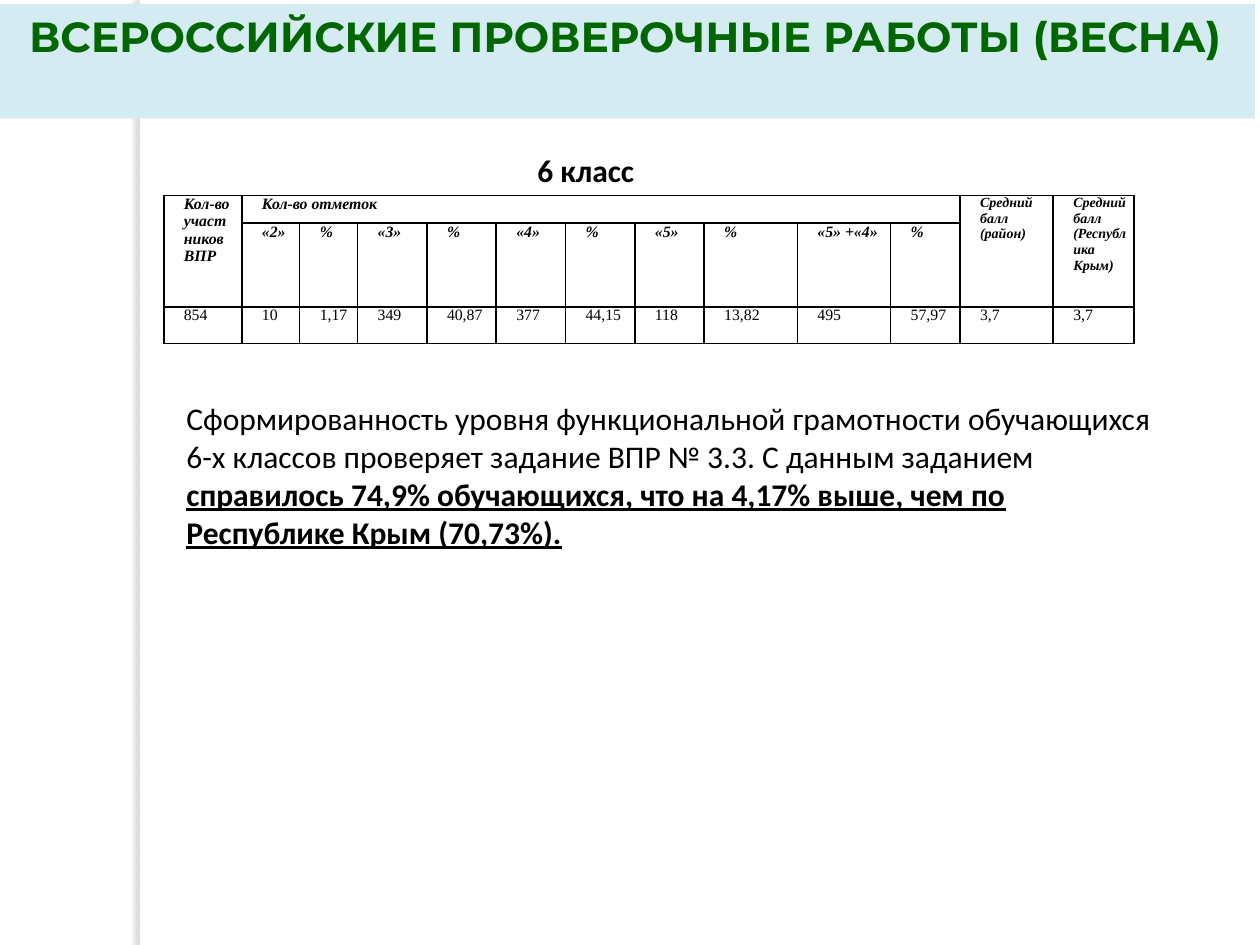
from dataclasses import dataclass

from lxml.etree import SubElement as Sub
from pptx import Presentation
from pptx.dml.color import RGBColor as Rgb
from pptx.enum.shapes import MSO_SHAPE as Shape
from pptx.enum.text import MSO_ANCHOR as Anchor, PP_ALIGN as Align
from pptx.oxml.ns import qn
from pptx.util import Pt


@dataclass(frozen=True)
class Theme:
    """Colours, fonts and type sizes of the slide."""
    white: str = "FFFFFF"
    band: str = "D4EBF1"
    green: str = "006600"
    black: str = "000000"
    shade: str = "736F63"
    head: str = "Montserrat"
    body: str = "Calibri"
    grid: str = "Times New Roman"
    big: float = 24
    mid: float = 18
    cell: float = 9
    small: float = 8


THEME = Theme()
WIDTHS = [44.6, 33.1, 33.1] + [39.6] * 5 + [53.3, 53.3, 39.6, 53.3, 46.1]
HEIGHTS = [15.8, 40.3, 20.9]
MARKS = ["«2»", "%", "«3»", "%", "«4»", "%", "«5»", "%", "«5» +«4»", "%"]
ROWS = [
    ["Кол-во участников ВПР", "Кол-во отметок "] + [""] * 9
    + ["Средний балл\n(район)", "Средний балл (Республика Крым)"],
    [""] + MARKS + ["", ""],
    ["854", "10", "1,17", "349", "40,87", "377", "44,15", "118", "13,82",
     "495", "57,97", "3,7", "3,7"],
]
SPANS = [(0, 0, 1, 0), (0, 1, 0, 10), (0, 11, 1, 11), (0, 12, 1, 12)]


def style(run, face, size, tone=THEME.black, bold=False, slant=False):
    """Format one run."""
    font = run.font
    font.name, font.size, font.bold, font.italic = face, Pt(size), bold, slant
    font.color.rgb = Rgb.from_string(tone)


def place(shape, box):
    """Move and size a shape in points."""
    shape.left, shape.top, shape.width, shape.height = map(Pt, box)


def add_strip(slide):
    """Put the white strip with its left shadow behind all else."""
    strip = slide.shapes.add_shape(
        Shape.RECTANGLE, Pt(79.9), Pt(0), Pt(5.8), Pt(540))
    strip.fill.solid()
    strip.fill.fore_color.rgb = Rgb.from_string(THEME.white)
    strip.line.fill.background()
    strip.shadow.inherit = False
    glow = strip._element.spPr.find(qn("a:effectLst"))
    cast = Sub(glow, qn("a:outerShdw"), blurRad=str(Pt(3)), dist=str(Pt(3)),
               dir="10800000", algn="ctr", rotWithShape="0")
    tone = Sub(cast, qn("a:srgbClr"), val=THEME.shade)
    Sub(tone, qn("a:alpha"), val="25000")
    slide.shapes._spTree.insert(2, strip._element)


def set_title(slide, text):
    """Fill the title placeholder as a coloured band."""
    title = slide.shapes.title
    place(title, (-2.9, 2.2, 720, 65.5))
    title.fill.solid()
    title.fill.fore_color.rgb = Rgb.from_string(THEME.band)
    frame = title.text_frame
    frame.text = text
    frame.vertical_anchor = Anchor.TOP
    frame.paragraphs[0].alignment = Align.CENTER
    style(frame.paragraphs[0].runs[0], THEME.head, THEME.big,
          THEME.green, bold=True)


def add_text(slide, box, text, bold=False, align=Align.LEFT):
    """Add a wrapped text box and return its paragraph."""
    frame = slide.shapes.add_textbox(*map(Pt, box)).text_frame
    frame.word_wrap = True
    frame.text = text
    para = frame.paragraphs[0]
    para.alignment = align
    style(para.runs[0], THEME.body, THEME.mid, bold=bold)
    return para


def add_edges(cell):
    """Draw black lines on all four sides of a cell."""
    props = cell._tc.get_or_add_tcPr()
    for spot, side in enumerate(("lnL", "lnR", "lnT", "lnB")):
        line = props.makeelement(qn(f"a:{side}"), {"w": str(Pt(1))})
        props.insert(spot, line)
        Sub(Sub(line, qn("a:solidFill")), qn("a:srgbClr"), val=THEME.black)


def fill_cell(cell, text, size, head):
    """Write and format one table cell."""
    cell.text = text
    cell.margin_left = cell.margin_right = Pt(4.3)
    cell.margin_top = cell.margin_bottom = Pt(0)
    cell.fill.background()
    add_edges(cell)
    for para in cell.text_frame.paragraphs:
        para.alignment = Align.JUSTIFY
        para._p.get_or_add_pPr().set("marL", str(Pt(7.2)))
        for run in para.runs:
            style(run, THEME.grid, size, bold=head, slant=head)


def add_grid(slide):
    """Add the table of marks."""
    frame = slide.shapes.add_table(
        len(ROWS), len(WIDTHS), Pt(93.6), Pt(111.6),
        Pt(sum(WIDTHS)), Pt(sum(HEIGHTS)))
    table = frame.table
    table.first_row = table.horz_banding = False
    for col, width in zip(table.columns, WIDTHS):
        col.width = Pt(width)
    for row, height in zip(table.rows, HEIGHTS):
        row.height = Pt(height)
    for r, texts in enumerate(ROWS):
        for c, text in enumerate(texts):
            size = THEME.small if r == 0 and c > 10 else THEME.cell
            fill_cell(table.cell(r, c), text, size, r < 2)
    for top, left, low, right in SPANS:
        table.cell(top, left).merge(table.cell(low, right))


def main():
    """Build and save the slide."""
    deck = Presentation()
    deck.slide_width, deck.slide_height = Pt(720), Pt(540)
    slide = deck.slides.add_slide(deck.slide_layouts[5])
    add_strip(slide)
    set_title(slide, "ВСЕРОССИЙСКИЕ ПРОВЕРОЧНЫЕ РАБОТЫ (ВЕСНА)")
    add_text(slide, (235.4, 82.8, 198.7, 28.8), "6 класс", True, Align.CENTER)
    add_grid(slide)
    para = add_text(
        slide, (99.4, 224.6, 572.4, 94.3),
        "Сформированность уровня функциональной грамотности обучающихся "
        "6-х классов проверяет задание ВПР № 3.3. С данным заданием ")
    run = para.add_run()
    run.text = ("справилось 74,9% обучающихся, что на 4,17% выше, "
                "чем по Республике Крым (70,73%).")
    style(run, THEME.body, THEME.mid, bold=True)
    run.font.underline = True
    deck.save("out.pptx")


if __name__ == "__main__":
    main()
